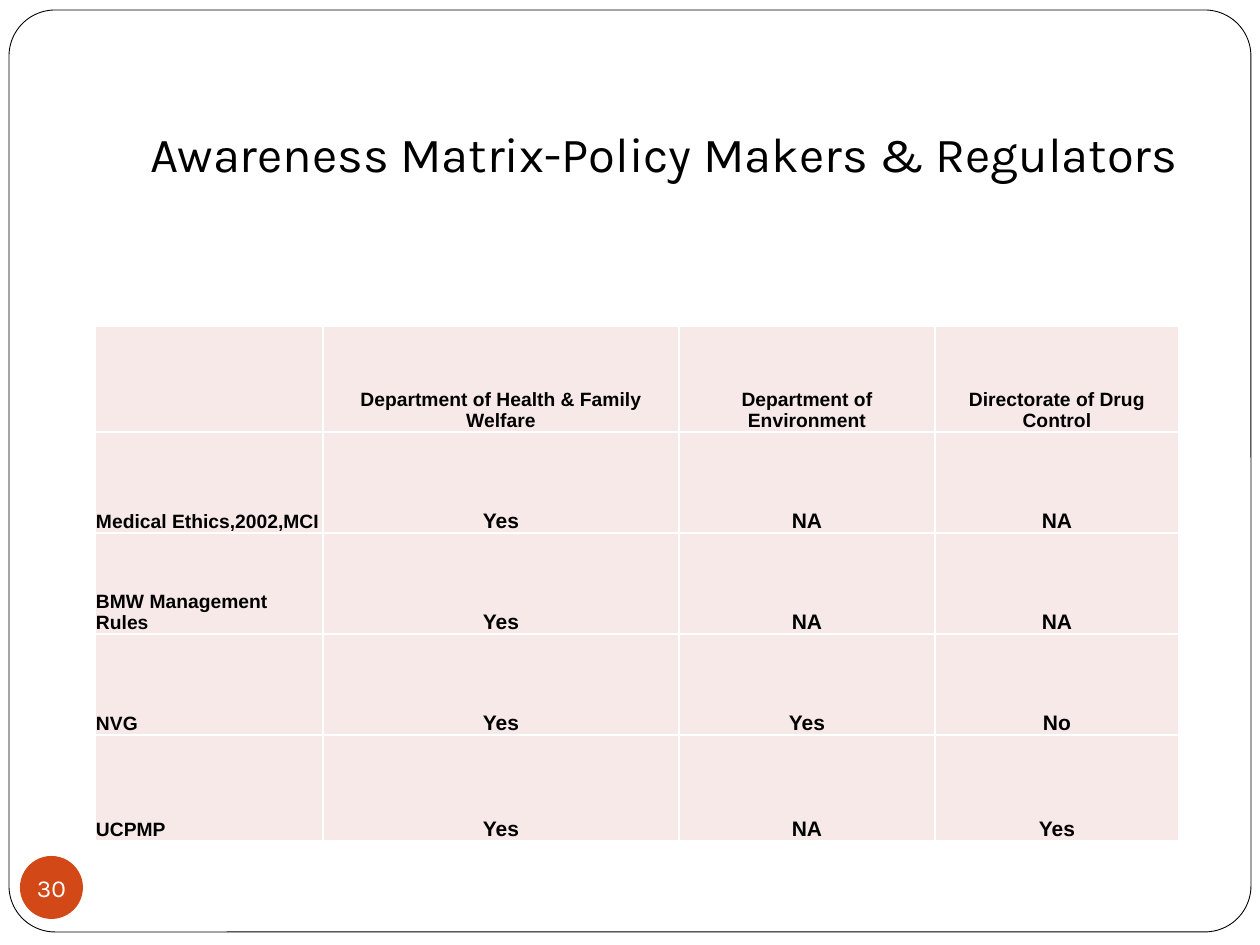
from lxml.etree import SubElement
from pptx import Presentation
from pptx.dml.color import RGBColor
from pptx.enum.shapes import MSO_SHAPE as Shape
from pptx.enum.text import MSO_ANCHOR as Anchor, MSO_AUTO_SIZE as AutoSize, PP_ALIGN as Align
from pptx.oxml.ns import qn
from pptx.util import Pt

# Content
TITLE = " Awareness Matrix-Policy Makers & Regulators"
PAGE_NUMBER = "30"
MATRIX = [
    ["", "Department of Health & Family Welfare", "Department of Environment",
     "Directorate of Drug Control"],
    ["Medical Ethics,2002,MCI", "Yes", "NA", "NA"],
    ["BMW Management Rules", "Yes", "NA", "NA"],
    ["NVG", "Yes", "Yes", "No"],
    ["UCPMP", "Yes", "NA", "Yes"],
]

# Style and layout, lengths in px
COLORS = {"black": "000000", "white": "FFFFFF", "accent": "D34817", "cell": "F7E9E8"}
HEADING_FONT, TABLE_FONT = "Karla", "Arial"
EMU_PER_PX = 914400 // 126
SLIDE_SIZE = (1260, 945)
FRAME_BOX = (9, 10, 1242, 922)
TITLE_BOX = (126, 38, 1071, 157)
BADGE_BOX = (20, 856, 63, 63)
TABLE_ORIGIN = (95, 326)
COLUMN_WIDTHS = [228, 356, 256, 244]
ROW_HEIGHTS = [106, 101, 101, 101, 106]


def px(length):
    return length * EMU_PER_PX


def color(name):
    return RGBColor.from_string(COLORS[name])


def set_margins(target, left, top, right, bottom):
    target.margin_left, target.margin_top = px(left), px(top)
    target.margin_right, target.margin_bottom = px(right), px(bottom)


def add_text(paragraph, text, size, font, color_name, align, bold=False):
    paragraph.alignment = align
    run = paragraph.add_run()
    run.text = text
    run.font.size, run.font.name, run.font.bold = Pt(size), font, bold
    run.font.color.rgb = color(color_name)


def add_filled_shape(slide, kind, box, fill):
    shape = slide.shapes.add_shape(kind, *map(px, box))
    shape.shadow.inherit = False
    shape.fill.solid()
    shape.fill.fore_color.rgb = color(fill)
    return shape


def add_borders(cell, color_name, width):
    properties = cell._tc.get_or_add_tcPr()
    for side in ("lnL", "lnR", "lnT", "lnB"):
        line = SubElement(properties, qn(f"a:{side}"), w=str(Pt(width)))
        fill = SubElement(line, qn("a:solidFill"))
        SubElement(fill, qn("a:srgbClr"), val=COLORS[color_name])


def add_frame(slide):
    frame = add_filled_shape(slide, Shape.ROUNDED_RECTANGLE, FRAME_BOX, "white")
    frame.adjustments[0] = 0.05
    frame.line.color.rgb = color("black")
    frame.line.width = Pt(0.5)
    slide.shapes._spTree.insert(2, frame._element)  # behind the title


def add_title(slide):
    title = slide.shapes.title
    title.left, title.top, title.width, title.height = map(px, TITLE_BOX)
    text_frame = title.text_frame
    text_frame.auto_size = AutoSize.NONE
    text_frame.word_wrap = True
    text_frame.vertical_anchor = Anchor.BOTTOM
    set_margins(text_frame, 13, 6, 13, 13)
    add_text(text_frame.paragraphs[0], TITLE, 28, HEADING_FONT, "black", Align.LEFT)


def add_badge(slide):
    badge = add_filled_shape(slide, Shape.OVAL, BADGE_BOX, "accent")
    badge.line.fill.background()
    text_frame = badge.text_frame
    text_frame.word_wrap = False
    text_frame.vertical_anchor = Anchor.MIDDLE
    set_margins(text_frame, 0, 0, 0, 0)
    add_text(text_frame.paragraphs[0], PAGE_NUMBER, 14, HEADING_FONT, "white", Align.CENTER)


def add_matrix(slide):
    size = (sum(COLUMN_WIDTHS), sum(ROW_HEIGHTS))
    table = slide.shapes.add_table(len(MATRIX), len(MATRIX[0]),
                                   *map(px, TABLE_ORIGIN + size)).table
    table.first_row = table.horz_banding = False
    for column, width in zip(table.columns, COLUMN_WIDTHS):
        column.width = px(width)
    for row, height in zip(table.rows, ROW_HEIGHTS):
        row.height = px(height)
    for i, texts in enumerate(MATRIX):
        for j, text in enumerate(texts):
            cell = table.cell(i, j)
            add_borders(cell, "white", 1)
            cell.fill.solid()
            cell.fill.fore_color.rgb = color("cell")
            cell.vertical_anchor = Anchor.BOTTOM
            set_margins(cell, 1, 1, 1, 0)
            if text:
                is_label = i == 0 or j == 0
                add_text(cell.text_frame.paragraphs[0], text, 11 if is_label else 12,
                         TABLE_FONT, "black", Align.CENTER if j else Align.LEFT, bold=True)


def main():
    presentation = Presentation()
    presentation.slide_width, presentation.slide_height = map(px, SLIDE_SIZE)
    slide = presentation.slides.add_slide(presentation.slide_layouts[5])
    slide.background.fill.solid()
    slide.background.fill.fore_color.rgb = color("white")
    add_frame(slide)
    add_title(slide)
    add_badge(slide)
    add_matrix(slide)
    presentation.save("out.pptx")


if __name__ == "__main__":
    main()
